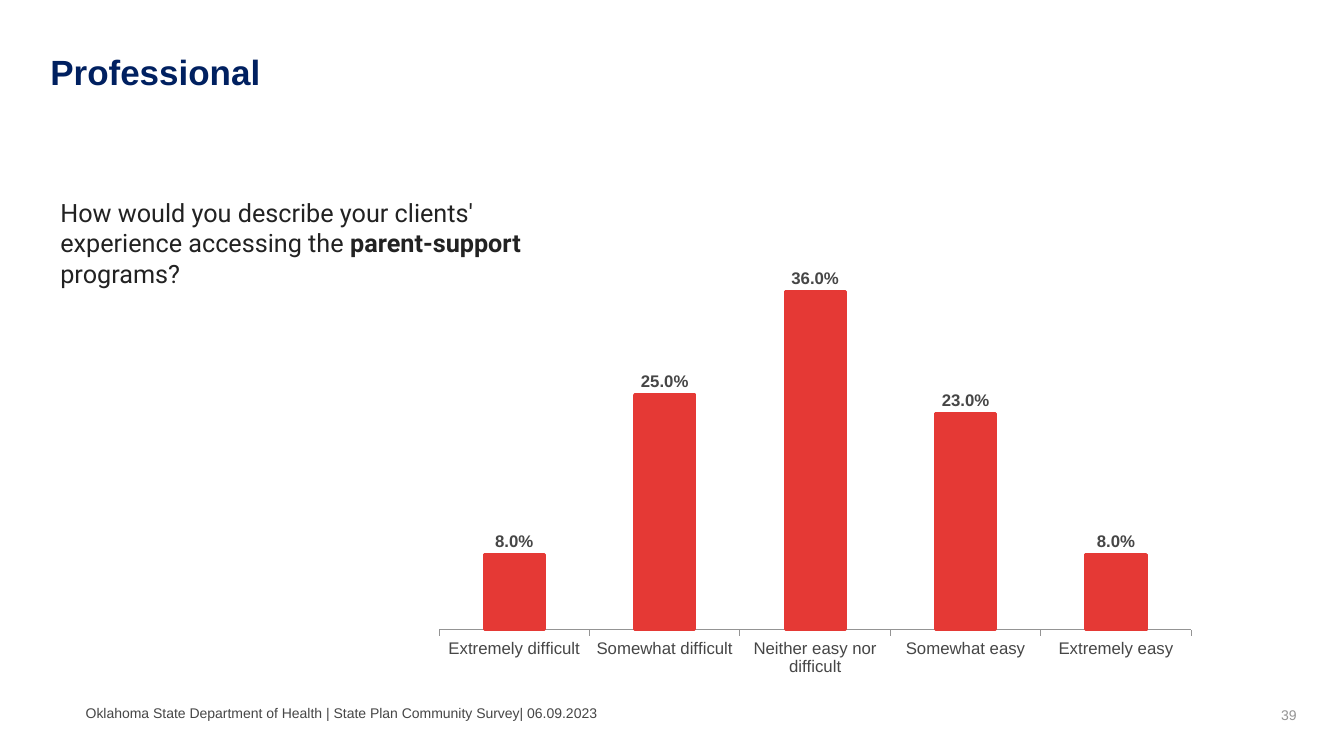
"""Build the Professional survey slide with its parent-support column chart."""
from lxml import etree
from pptx import Presentation
from pptx.chart.data import CategoryChartData
from pptx.dml.color import RGBColor
from pptx.enum import chart as ch, text
from pptx.util import Inches, Pt

GREY, RED = "464646", "E53935"


def style(font, size, color, bold=False, name="Arial"):
    font.size, font.bold, font.name = Pt(size), bold, name
    font.color.rgb = RGBColor.from_string(color)


def place(sp, box, left_inset=0.1, anchor=text.MSO_ANCHOR.TOP):
    sp.left, sp.top, sp.width, sp.height = [Inches(v) for v in box]
    tf = sp.text_frame
    tf.word_wrap, tf.auto_size = True, text.MSO_AUTO_SIZE.NONE
    tf.vertical_anchor, tf.margin_left = anchor, Inches(left_inset)
    return tf.paragraphs[0]


prs = Presentation()
prs.slide_width, prs.slide_height = Inches(13.33), Inches(7.5)
s = prs.slides.add_slide(prs.slide_layouts[5])

p = place(s.shapes.title, (0.5, 0.45, 12.14, 0.92), 0)
p.text = "Professional"
p.alignment = text.PP_ALIGN.LEFT
style(p.runs[0].font, 25, "002060", True)

footers = [
    ("Oklahoma State Department of Health | State Plan Community Survey| 06.09.2023",
     (0.85, 6.96, 8.9, 0.22), 0, GREY, text.PP_ALIGN.LEFT),
    ("39", (9.96, 6.98, 3, 0.22), 0.1, "949494", text.PP_ALIGN.RIGHT),
]
for words, box, inset, color, align in footers:
    p = place(s.shapes.add_textbox(0, 0, 0, 0), box, inset, text.MSO_ANCHOR.MIDDLE)
    p.text, p.alignment = words, align
    style(p.runs[0].font, 10, color)

p = place(s.shapes.add_textbox(0, 0, 0, 0), (0.5, 1.91, 5.38, 1.31))
question = [("How would you describe your clients' experience accessing the ", False),
            ("parent-support", True), (" programs?", False)]
for words, bold in question:
    r = p.add_run()
    r.text = words
    style(r.font, 18, "222222", bold, "Roboto")

data = CategoryChartData(number_format="0.0%")
data.categories = ["Extremely difficult", "Somewhat difficult",
                   "Neither easy nor difficult", "Somewhat easy", "Extremely easy"]
data.add_series("Series 1", (0.08, 0.25, 0.36, 0.23, 0.08))
chart = s.shapes.add_chart(ch.XL_CHART_TYPE.COLUMN_CLUSTERED, Inches(4.2), Inches(2.52),
                           Inches(7.77), Inches(4.44), data).chart
chart.has_legend = chart.has_title = False
style(chart.font, 18, GREY)

value_axis = chart.value_axis
value_axis.minimum_scale, value_axis.maximum_scale = 0, 0.4
value_axis.has_major_gridlines = value_axis.visible = False
category_axis = chart.category_axis
category_axis.major_tick_mark = ch.XL_TICK_MARK.OUTSIDE
category_axis.format.line.color.rgb = RGBColor.from_string("949494")
style(category_axis.tick_labels.font, 12, GREY)

plot = chart.plots[0]
plot.gap_width, plot.vary_by_categories = 150, False
bars = plot.series[0]
bars.format.fill.solid()
bars.format.fill.fore_color.rgb = RGBColor.from_string(RED)
bars.format.line.color.rgb = RGBColor.from_string(RED)
bars.format.line.width = Pt(2.25)
labels = bars.data_labels
labels.show_value, labels.position = True, ch.XL_LABEL_POSITION.OUTSIDE_END
labels.number_format, labels.number_format_is_linked = "0.0%", False
style(labels.font, 12, GREY, True)

C = "{http://schemas.openxmlformats.org/drawingml/2006/chart}"
plot_area = chart.element.find(f".//{C}plotArea")
layout = plot_area.find(f"{C}layout")
if layout is None:
    layout = etree.Element(f"{C}layout")
    plot_area.insert(0, layout)
manual = etree.SubElement(layout, f"{C}manualLayout")
for tag, val in [("layoutTarget", "inner"), ("xMode", "edge"), ("yMode", "edge"),
                 ("x", "0.02"), ("y", "0"), ("w", "0.96"), ("h", "0.84")]:
    etree.SubElement(manual, f"{C}{tag}", val=val)

prs.save("out.pptx")
